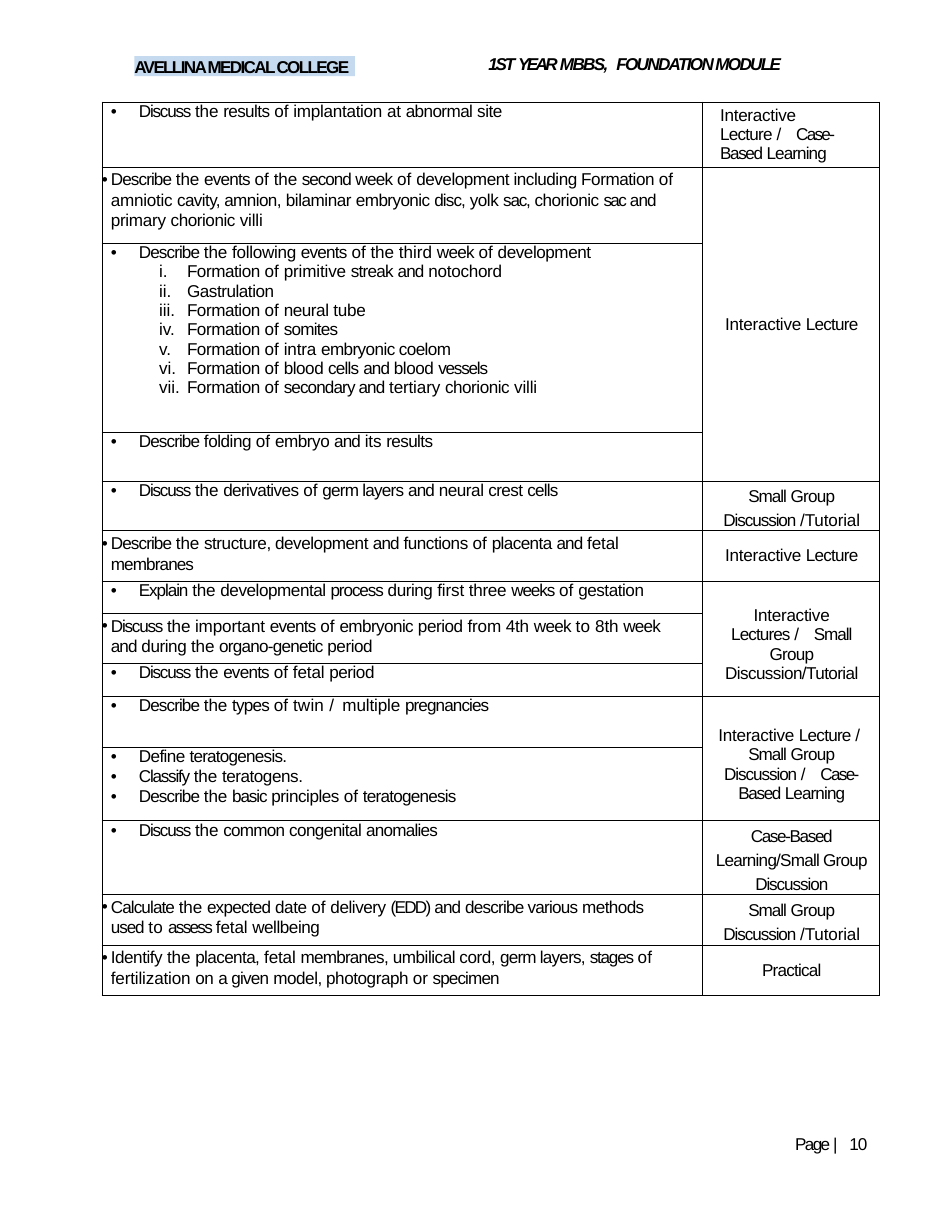
from itertools import groupby

from lxml import etree
from pptx import Presentation
from pptx import util as u
from pptx.dml.color import RGBColor
from pptx.enum import shapes, text
from pptx.oxml.ns import qn

COLORS = {"ink": "000000", "band": "C5D9EF"}
FONT = "Arial"

# Letter spacing in points; words not listed use DEFAULT_SPACING
DEFAULT_SPACING = -0.3
WORDS_BY_SPACING = {
    -1.1: "(EDD) assess sac Case-",
    -0.9: "Case-Based Based",
    -0.8: "Discuss Classify sac, vessels stages a",
    -0.7: "second Explain process weeks Small Discussion basic used",
    -0.6: "Describe and disc, secondary membranes Learning Lectures pregnancies "
          "Calculate specimen",
    -0.5: "events week streak somites cells germ layers layers, Lecture Group types "
          "teratogenesis teratogenesis. common anomalies expected describe various "
          "organo-genetic membranes, given Learning/Small Practical",
    -0.4: "results abnormal cavity, amnion, embryonic coelom derivatives crest "
          "placenta placenta, Define congenital methods Discussion/Tutorial",
    -0.2: "implantation Interactive amniotic primary following notochord tube three",
    -0.1: "the at villi intra primitive tertiary its fetal /Tutorial first important "
          "from 4th 8th multiple fertilization or",
    0: "of third",
    0.1: "to twin",
    1.2: "/",
}
SPACING = {word: points for points, words in WORDS_BY_SPACING.items()
           for word in words.split()}
WIDE_SLASH = {"/": 3.2}

# Learning objectives: (row height, layout, lines)
OBJECTIVES = [
    (0.58, "bullet", ["Discuss the results of implantation at abnormal site"]),
    (0.68, "wrapped", ["Describe the events of the second week of development including "
                       "Formation of amniotic cavity, amnion, bilaminar embryonic disc, "
                       "yolk sac, chorionic sac and primary chorionic villi"]),
    (1.69, "outline", ["Describe the following events of the third week of development",
                       "Formation of primitive streak and notochord", "Gastrulation",
                       "Formation of neural tube", "Formation of somites",
                       "Formation of intra embryonic coelom",
                       "Formation of blood cells and blood vessels",
                       "Formation of secondary and tertiary chorionic villi"]),
    (0.44, "bullet", ["Describe folding of embryo and its results"]),
    (0.44, "bullet", ["Discuss the derivatives of germ layers and neural crest cells"]),
    (0.45, "wrapped", ["Describe the structure, development and functions of placenta "
                       "and fetal membranes"]),
    (0.29, "bullet", ["Explain the developmental process during first three weeks "
                      "of gestation"]),
    (0.44, "wrapped", ["Discuss the important events of embryonic period from 4th week "
                       "to 8th week and during the organo-genetic period"]),
    (0.3, "bullet", ["Discuss the events of fetal period"]),
    (0.45, "bullet", ["Describe the types of twin / multiple pregnancies"]),
    (0.66, "bullet", ["Define teratogenesis.", "Classify the teratogens.",
                      "Describe the basic principles of teratogenesis"]),
    (0.66, "bullet", ["Discuss the common congenital anomalies"]),
    (0.45, "wrapped", ["Calculate the expected date of delivery (EDD) and describe "
                       "various methods used to assess fetal wellbeing"]),
    (0.45, "wrapped", ["Identify the placenta, fetal membranes, umbilical cord, germ "
                       "layers, stages of fertilization on a given model, photograph "
                       "or specimen"]),
]

# Teaching modes: (first row, rows spanned, top margin, line spacing, lines)
TUTORIAL = ["Small Group", "Discussion /Tutorial"]
LECTURE = ["Interactive Lecture"]
LOOSE = u.Pt(15.5)
MODES = [
    (0, 1, 0, 1.02, ["Interactive", "Lecture / Case-", "Based Learning"]),
    (1, 3, 0, 1.0, LECTURE),
    (4, 1, 0, LOOSE, TUTORIAL),
    (5, 1, 0, 1.0, LECTURE),
    (6, 3, 0.1, 1.02, ["Interactive", "Lectures / Small", "Group", "Discussion/Tutorial"]),
    (9, 2, 0.1, 1.02, ["Interactive Lecture /", "Small Group", "Discussion / Case-",
                       "Based Learning"]),
    (11, 1, 0, LOOSE, ["Case-Based", "Learning/Small Group", "Discussion"]),
    (12, 1, 0, LOOSE, TUTORIAL),
    (13, 1, 0, 1.0, ["Practical"]),
]


class Page:
    """Holds the text style and the current slide."""

    def __init__(self, slide):
        self.slide = slide

    def style(self, paragraph, bold=False, italic=False):
        font = paragraph.font
        font.name, font.size, font.bold, font.italic = FONT, u.Pt(11), bold, italic
        font.color.rgb = RGBColor.from_string(COLORS["ink"])

    def spaced_run(self, paragraph, words, spacing):
        run = paragraph.add_run()
        run.text = words
        run.font._element.set("spc", str(round(spacing * 100)))

    def sentence(self, paragraph, words, overrides):
        """Writes a line, with one run for each stretch of equal letter spacing."""
        lookup = {**SPACING, **overrides}
        tokens = words.split()
        pieces = [(word + " " * (i < len(tokens) - 1), lookup.get(word, DEFAULT_SPACING))
                  for i, word in enumerate(tokens)]
        for spacing, group in groupby(pieces, key=lambda piece: piece[1]):
            self.spaced_run(paragraph, "".join(piece[0] for piece in group), spacing)

    def bullet(self, paragraph, left, hanging, roman=False):
        props = paragraph._p.get_or_add_pPr()
        props.set("marL", str(u.Inches(left)))
        props.set("indent", str(-u.Inches(hanging)))
        marks = [etree.Element(qn("a:buFont"), typeface=FONT),
                 etree.Element(qn("a:buAutoNum"), type="romanLcPeriod") if roman
                 else etree.Element(qn("a:buChar"), char="•")]
        for mark in marks:
            props.insert_element_before(mark, "a:tabLst", "a:defRPr", "a:extLst")

    def label(self, box, runs, fill=None, **emphasis):
        place = [u.Inches(length) for length in box]
        if fill:
            shape = self.slide.shapes.add_shape(shapes.MSO_SHAPE.RECTANGLE, *place)
            shape.shadow.inherit = False
            shape.fill.solid()
            shape.fill.fore_color.rgb = RGBColor.from_string(fill)
            shape.line.fill.background()
        else:
            shape = self.slide.shapes.add_textbox(*place)
        frame = shape.text_frame
        frame.word_wrap = True
        frame.vertical_anchor = text.MSO_ANCHOR.TOP
        frame.margin_left = frame.margin_right = frame.margin_top = frame.margin_bottom = 0
        paragraph = frame.paragraphs[0]
        paragraph.alignment = text.PP_ALIGN.LEFT
        self.style(paragraph, **emphasis)
        for words, spacing in runs:
            self.spaced_run(paragraph, words, spacing)

    def table(self, left, top, columns, rows):
        box = [u.Inches(n) for n in (left, top, sum(columns), sum(rows))]
        table = self.slide.shapes.add_table(len(rows), len(columns), *box).table
        table.first_row = table.horz_banding = False
        for column, width in zip(table.columns, columns):
            column.width = u.Inches(width)
        for row, height in zip(table.rows, rows):
            row.height = u.Inches(height)
        for cell in table.iter_cells():
            self.plain_cell(cell)
        return table

    def plain_cell(self, cell):
        cell.margin_left = cell.margin_right = cell.margin_top = cell.margin_bottom = 0
        self.style(cell.text_frame.paragraphs[0])
        for side in ("lnL", "lnR", "lnT", "lnB"):
            line = etree.SubElement(cell._tc.get_or_add_tcPr(), qn(f"a:{side}"),
                                    w=str(u.Pt(0.5)))
            fill = etree.SubElement(line, qn("a:solidFill"))
            etree.SubElement(fill, qn("a:srgbClr"), val=COLORS["ink"])
        cell.fill.background()

    def objective(self, cell, layout, lines):
        for i, words in enumerate(lines):
            paragraph = cell.text_frame.add_paragraph() if i else cell.text_frame.paragraphs[0]
            self.style(paragraph)
            roman = layout == "outline" and i > 0
            paragraph.space_before = u.Pt(0.7 if i and not roman else 0.2)
            if layout == "wrapped":
                cell.margin_top, cell.margin_right = u.Inches(0.01), u.Inches(0.22)
                paragraph.line_spacing = u.Pt(13.4)
                self.bullet(paragraph, 0.08, 0.08)
            else:
                paragraph.level = int(roman)
                self.bullet(paragraph, 0.76 if roman else 0.33, 0.25, roman)
            self.sentence(paragraph, words, {})

    def mode(self, cell, top, line_spacing, lines, centred):
        cell.vertical_anchor = text.MSO_ANCHOR.MIDDLE
        cell.margin_top, cell.margin_left = u.Inches(top), u.Inches(0.02 if centred else 0.16)
        paragraph = cell.text_frame.paragraphs[0]
        paragraph.alignment = text.PP_ALIGN.CENTER if centred else text.PP_ALIGN.LEFT
        paragraph.line_spacing = line_spacing
        for i, words in enumerate(lines):
            if i:
                paragraph.add_line_break()
            self.sentence(paragraph, words, WIDE_SLASH)


deck = Presentation()
deck.slide_width, deck.slide_height = u.Inches(8.5), u.Inches(11)
page = Page(deck.slides.add_slide(deck.slide_layouts[6]))

# Page header and page number
page.label((1.2, 0.5, 1.97, 0.18), [("AVELLINA MEDICAL COLLEGE", -1.1)],
           fill=COLORS["band"], bold=True)
page.label((4.36, 0.48, 3.38, 0.2), [("1ST ", -1.4), ("YEAR ", -1.7), ("MBBS,", -1.1),
           (" ", 2), ("FOUNDATION MODULE", -1.1)], bold=True, italic=True)
page.label((7.1, 10.12, 0.85, 0.18), [("Page ", -1.1), ("| ", 2.2), ("10", -0.6)])

# Objectives and teaching modes
table = page.table(0.91, 0.91, [5.36, 1.58], [height for height, _, _ in OBJECTIVES])
for row, (_, layout, lines) in enumerate(OBJECTIVES):
    page.objective(table.cell(row, 0), layout, lines)
for row, span, top, line_spacing, lines in MODES:
    cell = table.cell(row, 1)
    if span > 1:
        cell.merge(table.cell(row + span - 1, 1))
    page.mode(cell, top, line_spacing, lines, centred=row > 0)

deck.save("out.pptx")
